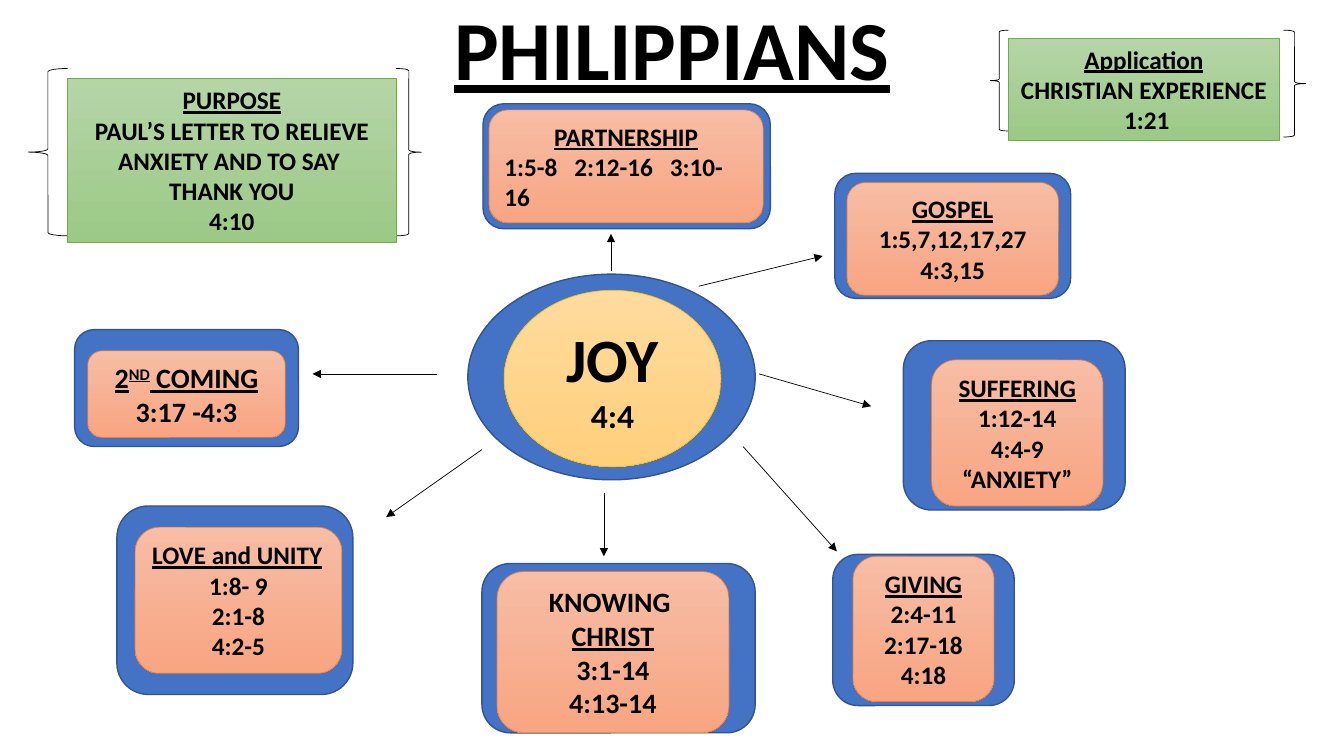
import pptx
import pptx.util
import pptx.dml.color
import pptx.enum.shapes
import pptx.enum.text
import pptx.oxml
import pptx.oxml.ns

Pt = pptx.util.Pt
Kind = pptx.enum.shapes.MSO_SHAPE
Align = pptx.enum.text.PP_ALIGN
Anchor = pptx.enum.text.MSO_ANCHOR

deck = pptx.Presentation()
deck.slide_width = pptx.util.Inches(13.33)
deck.slide_height = pptx.util.Inches(7.5)
cell = pptx.util.Inches(0.1)
slide = deck.slides.add_slide(deck.slide_layouts[0])
shapes = slide.shapes


def hue(code):
    return pptx.dml.color.RGBColor.from_string(code)


def draw(kind, box, fills, edge, width):
    item = shapes.add_shape(kind, *[round(n * cell) for n in box])
    item.shadow.inherit = False
    if len(fills) == 2:
        item.fill.gradient()
        item.fill.gradient_angle = 270
        for stop, code in zip(item.fill.gradient_stops, fills):
            stop.color.rgb = hue(code)
    elif fills:
        item.fill.solid()
        item.fill.fore_color.rgb = hue(fills[0])
    else:
        item.fill.background()
    item.line.color.rgb = hue(edge)
    item.line.width = Pt(width)
    return item


title = shapes.title
title.left, title.top = 0, round(0.3 * cell)
title.width, title.height = deck.slide_width, 74 * cell
title.fill.solid()
title.fill.fore_color.rgb = hue("FFFFFF")
frame = title.text_frame
frame.text = "PHILIPPIANS"
frame.auto_size = pptx.enum.text.MSO_AUTO_SIZE.NONE
frame.vertical_anchor = Anchor.TOP
head = frame.paragraphs[0]
head.alignment = Align.CENTER
head.line_spacing = 0.9
font = head.runs[0].font
font.name, font.size, font.bold, font.underline = "Calibri", Pt(60), True, True
font.color.rgb = hue("000000")

sub = slide.placeholders[1].element
sub.getparent().remove(sub)

blue = ["4472C4"]
for box in [
    (47.8, 55.9, 27.1, 16.8),
    (11.6, 50.2, 23.4, 18.7),
    (7.4, 32.7, 22.2, 11.6),
    (47.9, 10.3, 28.5, 12.4),
    (82.8, 17.2, 23.4, 12.4),
    (89.6, 33.8, 22, 16.8),
    (82.6, 55, 18, 15),
]:
    draw(Kind.ROUNDED_RECTANGLE, box, blue, "325491", 1)
draw(Kind.OVAL, (46.4, 27.2, 28.5, 20.4), blue, "325491", 1)

for kind, box in [
    (Kind.LEFT_BRACE, (2.8, 6.8, 3.9, 16.6)),
    (Kind.RIGHT_BRACE, (39.3, 6.8, 2.5, 16.6)),
    (Kind.LEFT_BRACE, (98.2, 3, 1.8, 10)),
    (Kind.RIGHT_BRACE, (127.3, 3, 2.2, 10.6)),
]:
    draw(kind, box, [], "000000", 0.5)

peach = (Kind.ROUNDED_RECTANGLE, ["F7BDA5", "F8A582"], "ED7D31")
green = (Kind.RECTANGLE, ["B5D5A7", "9CC987"], "70AD47")
gold = (Kind.OVAL, ["FFDB9E", "FFD07C"], "FFC000")

cards = [
    (gold, (50, 28.8, 21.5, 17.5), [44, 24], None, ["JOY", "4:4"]),
    (peach, (49.3, 56.7, 23, 16), [20], 1, ["KNOWING ", "CHRIST", "3:1-14", "4:13-14"]),
    (peach, (13.4, 52.3, 20.5, 14.5), [18], 0, ["LOVE and UNITY", "1:8- 9", "2:1-8", "4:2-5"]),
    (peach, (8.7, 34.8, 19.6, 8.6), [20], 0, ["2|ND| COMING", "3:17 -4:3"]),
    (green, (6.7, 7.8, 32.6, 16.2), [18], 0,
     ["PURPOSE", "PAUL’S LETTER TO RELIEVE ANXIETY AND TO SAY ", "THANK YOU", "4:10"]),
    (green, (100, 3.8, 26.9, 10.1), [18], 0, ["Application", "CHRISTIAN EXPERIENCE", " 1:21"]),
    (peach, (48.5, 10.9, 27.2, 11.2), [18], 0, ["PARTNERSHIP", "1:5-8   2:12-16   3:10-16"]),
    (peach, (84, 18.1, 21, 11.2), [18], 0, ["GOSPEL", "1:5,7,12,17,27", "4:3,15"]),
    (peach, (92.4, 35.7, 17, 14.5), [18], 0, ["SUFFERING", "1:12-14", "4:4-9", "“ANXIETY”"]),
    (peach, (84.6, 55.2, 14, 14.4), [18], 0, ["GIVING", "2:4-11", "2:17-18", "4:18"]),
]
flush = ["LOVE and UNITY", "1:5-8   2:12-16   3:10-16"]
for (kind, fills, edge), box, sizes, mark, lines in cards:
    frame = draw(kind, box, fills, edge, 0.5).text_frame
    frame.word_wrap = True
    frame.vertical_anchor = Anchor.MIDDLE
    for row, line in enumerate(lines):
        para = frame.add_paragraph() if row else frame.paragraphs[0]
        para.alignment = Align.LEFT if line in flush else Align.CENTER
        for part, words in enumerate(line.split("|")):
            run = para.add_run()
            run.text = words
            font = run.font
            font.name, font.bold = "Calibri", True
            font.size = Pt(sizes[min(row, len(sizes) - 1)])
            font.underline = row == mark
            font.color.rgb = hue("000000")
            if part == 1:
                run._r.get_or_add_rPr().set("baseline", "30000")

for ends in [
    (47.8, 44.6, 38.3, 51.3),
    (43.3, 37.1, 31, 37.1),
    (60.6, 26.9, 60.6, 23.2),
    (69.3, 28.4, 81.6, 25.4),
    (75.3, 37.1, 86.4, 40.3),
    (73.7, 44.3, 83, 54.7),
    (59.9, 48.9, 59.9, 55.2),
]:
    arrow = shapes.add_connector(
        pptx.enum.shapes.MSO_CONNECTOR.STRAIGHT, *[round(n * cell) for n in ends])
    arrow.line.color.rgb = hue("000000")
    arrow.line.width = Pt(0.5)
    tip = pptx.oxml.parse_xml("<a:tailEnd %s type='triangle'/>" % pptx.oxml.ns.nsdecls("a"))
    arrow.line._get_or_add_ln().append(tip)
    flat = pptx.oxml.parse_xml("<a:effectLst %s/>" % pptx.oxml.ns.nsdecls("a"))
    arrow._element.spPr.append(flat)

deck.save("out.pptx")
